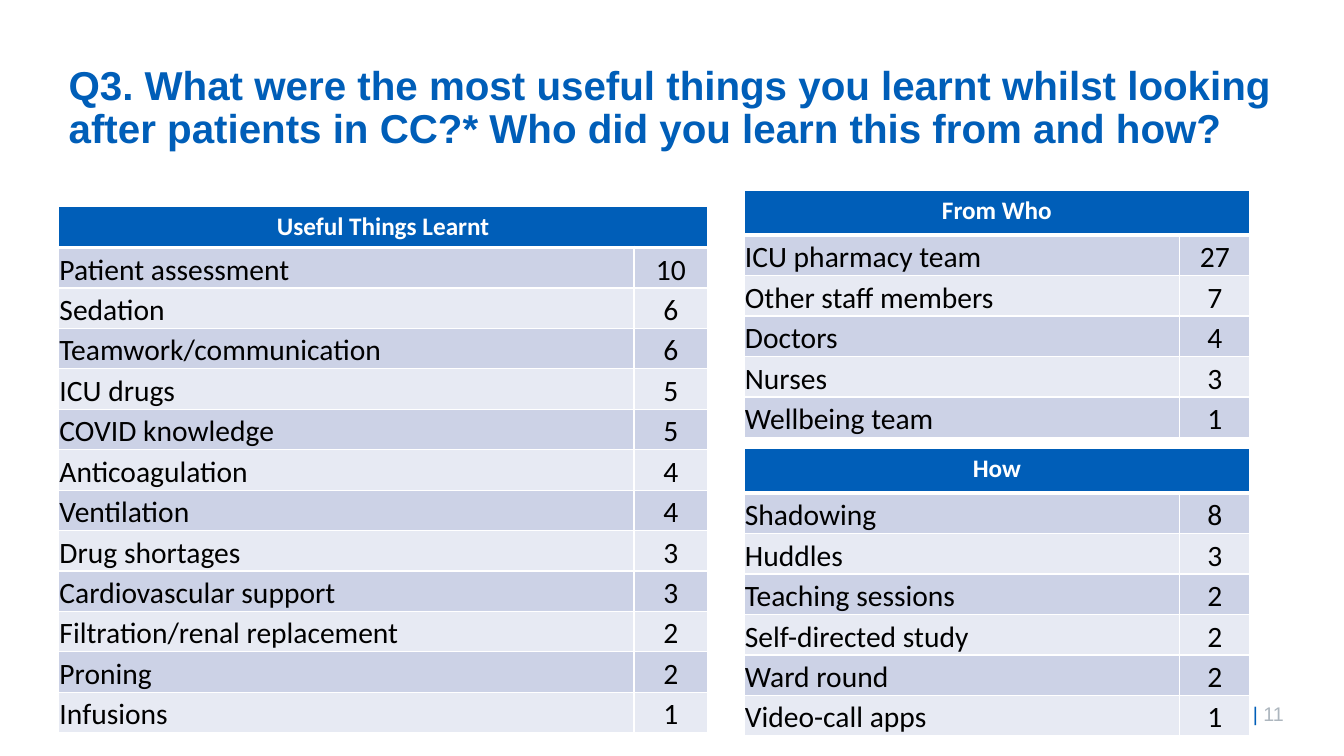
from lxml import etree
from pptx import Presentation
from pptx import util as u
from pptx.dml.color import RGBColor
from pptx.enum import text
from pptx.oxml import ns

BLUE = RGBColor(0x00, 0x5E, 0xB8)
WHITE = RGBColor(0xFF, 0xFF, 0xFF)
BLACK = RGBColor(0x00, 0x00, 0x00)
GREY = RGBColor(0xAD, 0xB6, 0xBE)
BANDS = (RGBColor(0xCC, 0xD2, 0xE6), RGBColor(0xE7, 0xEA, 0xF3))

TITLE = ("Q3. What were the most useful things you learnt whilst looking "
         "after patients in CC?* Who did you learn this from and how?")
LEARNT = [("Patient assessment", 10), ("Sedation", 6),
          ("Teamwork/communication", 6), ("ICU drugs", 5),
          ("COVID knowledge", 5), ("Anticoagulation", 4), ("Ventilation", 4),
          ("Drug shortages", 3), ("Cardiovascular support", 3),
          ("Filtration/renal replacement", 2), ("Proning", 2),
          ("Infusions", 1)]
FROM_WHO = [("ICU pharmacy team", 27), ("Other staff members", 7),
            ("Doctors", 4), ("Nurses", 3), ("Wellbeing team", 1)]
HOW = [("Shadowing", 8), ("Huddles", 3), ("Teaching sessions", 2),
       ("Self-directed study", 2), ("Ward round", 2), ("Video-call apps", 1)]

ROW_HEIGHT = 28.9


def add_span(para, words, font, size, color, bold=False):
    span = para.add_run()
    span.text = words
    span.font.name = font
    span.font.size = u.Pt(size)
    span.font.color.rgb = color
    span.font.bold = bold


def place(shape, box):
    shape.left, shape.top, shape.width, shape.height = map(u.Pt, box)


def add_title(page, box):
    title = page.shapes.title
    place(title, box)
    frame = title.text_frame
    frame.word_wrap = True
    frame.auto_size = text.MSO_AUTO_SIZE.NONE
    frame.vertical_anchor = text.MSO_ANCHOR.TOP
    para = frame.paragraphs[0]
    para.alignment = text.PP_ALIGN.LEFT
    para.line_spacing = 0.9
    add_span(para, TITLE, "Arial", 28.8, BLUE, True)


def add_page_number(page, box):
    frame = page.shapes.add_textbox(*map(u.Pt, box)).text_frame
    frame.word_wrap = True
    para = frame.paragraphs[0]
    add_span(para, "| ", "Arial", 14.1, BLUE)
    add_span(para, "11", "Arial", 14.1, GREY)


def set_borders(cell, **widths):
    """Draw white borders; widths are in points by side."""
    properties = cell._tc.get_or_add_tcPr()
    for side in ("L", "R", "T", "B"):
        line = etree.SubElement(properties, ns.qn("a:ln" + side),
                                w=str(u.Pt(widths.get(side, 1))))
        fill = etree.SubElement(line, ns.qn("a:solidFill"))
        etree.SubElement(fill, ns.qn("a:srgbClr"), val=str(WHITE))


def fill_cell(cell, color):
    cell.fill.solid()
    cell.fill.fore_color.rgb = color


def add_count_table(page, box, heading, counts, count_width, head_height):
    """Place a heading row over label and count rows; box is left, top, width."""
    left, top, width = box
    height = head_height + ROW_HEIGHT * len(counts)
    table = page.shapes.add_table(
        len(counts) + 1, 2, *map(u.Pt, (left, top, width, height))).table
    table.columns[0].width = u.Pt(width - count_width)
    table.columns[1].width = u.Pt(count_width)

    # Heading across both columns
    table.rows[0].height = u.Pt(head_height)
    for cell in table.rows[0].cells:
        set_borders(cell, B=3)
        fill_cell(cell, BLUE)
    head = table.cell(0, 0)
    head.merge(table.cell(0, 1))
    para = head.text_frame.paragraphs[0]
    para.alignment = text.PP_ALIGN.CENTER
    add_span(para, heading, "Calibri", 18, WHITE, True)

    # Banded rows
    aligns = (text.PP_ALIGN.LEFT, text.PP_ALIGN.CENTER)
    for index, entry in enumerate(counts):
        row = table.rows[index + 1]
        row.height = u.Pt(ROW_HEIGHT)
        for cell, value, align in zip(row.cells, entry, aligns):
            set_borders(cell, T=3 if index == 0 else 1)
            fill_cell(cell, BANDS[index % 2])
            cell.vertical_anchor = text.MSO_ANCHOR.BOTTOM
            cell.margin_left = cell.margin_right = cell.margin_top = u.Pt(0.7)
            cell.margin_bottom = u.Pt(0)
            para = cell.text_frame.paragraphs[0]
            para.alignment = align
            add_span(para, str(value), "Calibri", 21.1, BLACK)


def build_survey_slide(deck):
    page = deck.slides.add_slide(deck.slide_layouts[5])
    add_page_number(page, (887.8, 497.5, 67.7, 24.5))
    add_title(page, (41.8, 43.2, 877, 48.2))
    add_count_table(page, (41.8, 147.3, 463.7),
                    "Useful Things Learnt", LEARNT, 52.6, 29.5)
    add_count_table(page, (531.4, 136.1, 361.4),
                    "From Who", FROM_WHO, 50, 31.9)
    add_count_table(page, (531.4, 320.4, 361.4), "How", HOW, 50, 31.9)


def main():
    deck = Presentation()
    deck.slide_width, deck.slide_height = u.Pt(960), u.Pt(540)
    build_survey_slide(deck)
    deck.save("out.pptx")


if __name__ == "__main__":
    main()
